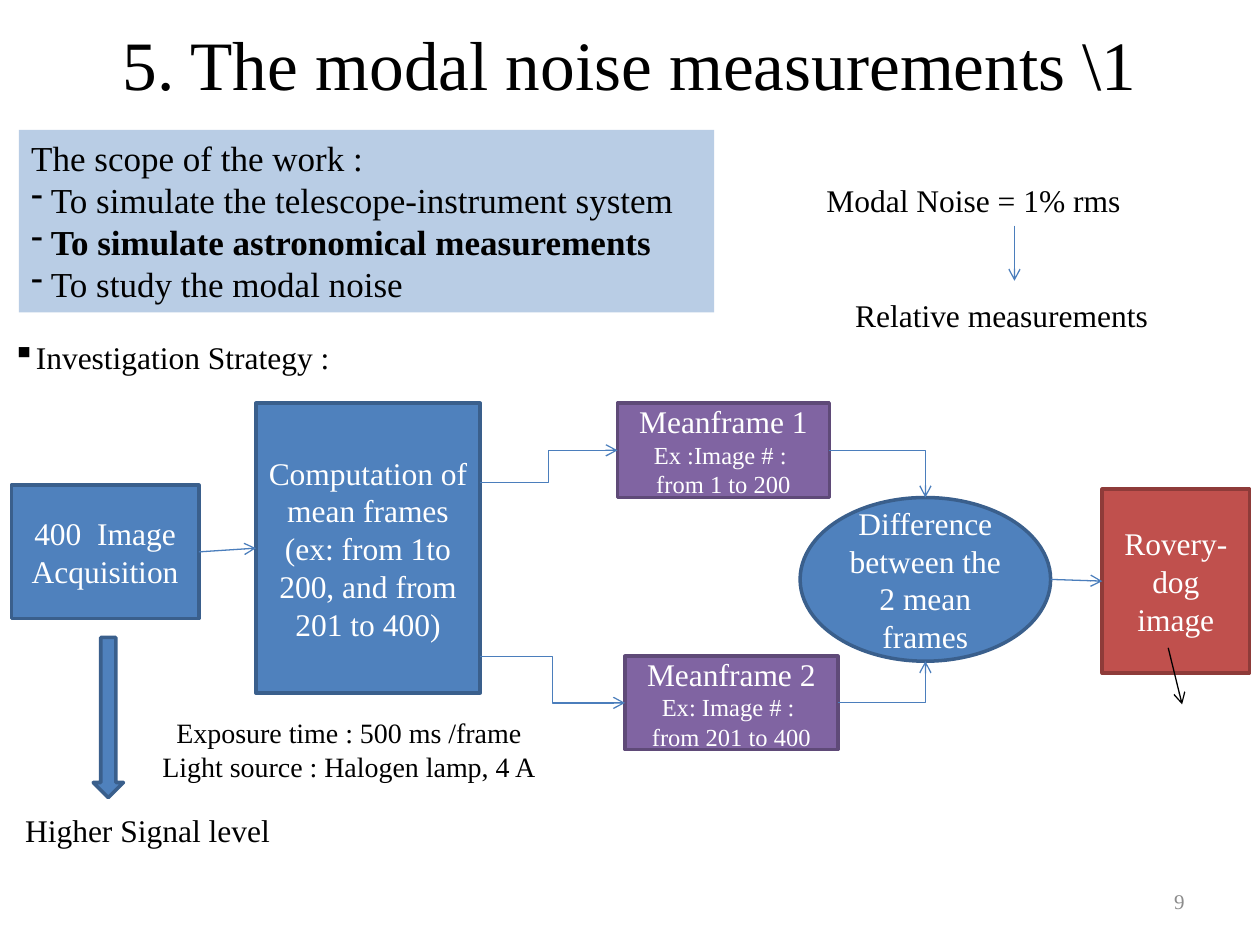
from lxml import etree
from pptx import Presentation, util as u
from pptx.dml.color import RGBColor
from pptx.enum import shapes, text
from pptx.oxml.ns import qn

BLACK = RGBColor(0, 0, 0)
WHITE = RGBColor(0xFF, 0xFF, 0xFF)
GREY = RGBColor(0x8C, 0x8C, 0x8C)
BLUE, BLUE_EDGE = RGBColor(0x4F, 0x81, 0xBD), RGBColor(0x3A, 0x5F, 0x8C)
PURPLE, PURPLE_EDGE = RGBColor(0x80, 0x64, 0xA2), RGBColor(0x5F, 0x4A, 0x78)
RED, RED_EDGE = RGBColor(0xC0, 0x50, 0x4D), RGBColor(0x8E, 0x3B, 0x39)
PALE_BLUE = RGBColor(0xB9, 0xCD, 0xE5)
LINE_BLUE = RGBColor(0x4B, 0x7E, 0xBC)
FONT = "Times New Roman"
LEFT, CENTER, RIGHT = text.PP_ALIGN.LEFT, text.PP_ALIGN.CENTER, text.PP_ALIGN.RIGHT
TOP, MIDDLE = text.MSO_ANCHOR.TOP, text.MSO_ANCHOR.MIDDLE
RECT, OVAL, DOWN = (shapes.MSO_SHAPE.RECTANGLE, shapes.MSO_SHAPE.OVAL,
                    shapes.MSO_SHAPE.DOWN_ARROW)

# Content: box in cm (left, top, width, height); each line is (text, format)
LABELS = [
    ((1.27, -0.33, 22.86, 3.18), CENTER, MIDDLE,
     [("5. The modal noise measurements \\1", {"size": 39.6})]),
    ((0, 6.68, 19.71, 1.02), LEFT, TOP,
     [("Investigation Strategy :", {"size": 18, "bullet": "▪"})]),
    ((2.92, 14.3, 8.23, 1.63), CENTER, TOP,
     [("Exposure time : 500 ms /frame", {"size": 16}),
      ("Light source : Halogen lamp, 4 A", {"size": 16})]),
    ((16.41, 3.53, 8.08, 1.02), LEFT, TOP, [("Modal Noise = 1% rms", {"size": 18})]),
    ((16.99, 5.84, 7.98, 1.02), LEFT, TOP, [("Relative measurements", {"size": 18})]),
    ((-0.69, 16.23, 7.49, 1.02), CENTER, TOP, [("Higher Signal level ", {"size": 18})]),
    ((18.21, 17.65, 5.92, 1.02), RIGHT, MIDDLE, [("9", {"size": 12, "color": GREY})]),
]
SCOPE_BOX = (0.38, 2.62, 14.02, 3.68)
SCOPE = [
    ("The scope of the work :", {"size": 20}),
    (" To simulate the telescope-instrument system", {"size": 20, "bullet": "-"}),
    (" To simulate astronomical measurements", {"size": 20, "bullet": "-", "bold": True}),
    (" To study the modal noise", {"size": 20, "bullet": "-"}),
]
BIG, SMALL = {"size": 18, "color": WHITE}, {"size": 14, "color": WHITE}
STEPS = {
    "acquisition": (RECT, (0.23, 9.78, 3.78, 2.69), BLUE, BLUE_EDGE,
                    [("400  Image Acquisition", BIG)]),
    "computation": (RECT, (5.16, 8.13, 4.52, 5.84), BLUE, BLUE_EDGE,
                    [("Computation of mean frames (ex: from 1to 200, and from 201 to 400)", BIG)]),
    "mean 1": (RECT, (12.45, 8.13, 4.27, 1.9), PURPLE, PURPLE_EDGE,
               [("Meanframe 1", BIG), ("Ex :Image # : ", SMALL), ("from 1 to 200", SMALL)]),
    "mean 2": (RECT, (12.6, 13.23, 4.29, 1.88), PURPLE, PURPLE_EDGE,
               [("Meanframe 2", BIG), ("Ex: Image # : ", SMALL), ("from 201 to 400", SMALL)]),
    "difference": (OVAL, (16.13, 10.03, 5.05, 3.3), BLUE, BLUE_EDGE,
                   [("Difference between the 2 mean frames", BIG)]),
    "result": (RECT, (22.22, 9.86, 2.97, 3.71), RED, RED_EDGE,
               [("Rovery-dog image", BIG)]),
    "signal arrow": (DOWN, (1.88, 12.85, 0.61, 3.23), BLUE, BLUE_EDGE, []),
}
BRANCHES = [("mean 1", 9.73, "top"), ("mean 2", 13.23, "bottom")]
FREE_ARROWS = [((20.45, 4.55), (20.45, 5.66), LINE_BLUE),
               ((23.55, 13.06), (23.83, 14.2), BLACK)]

presentation = Presentation()
presentation.slide_width, presentation.slide_height = u.Cm(25.4), u.Cm(19.05)
slide = presentation.slides.add_slide(presentation.slide_layouts[6])


def lengths(values):
    return [u.Cm(value) for value in values]


def write(shape, lines, align, anchor):
    frame = shape.text_frame
    frame.word_wrap = True
    frame.vertical_anchor = anchor
    for index, (words, style) in enumerate(lines):
        paragraph = frame.paragraphs[0] if index == 0 else frame.add_paragraph()
        paragraph.alignment = align
        run = paragraph.add_run()
        run.text = words
        font = {"name": FONT, "size": u.Pt(style["size"]), "bold": style.get("bold", False)}
        for name, value in font.items():
            setattr(run.font, name, value)
        run.font.color.rgb = style.get("color", BLACK)
        if "bullet" in style:
            properties = paragraph._p.get_or_add_pPr()
            etree.SubElement(properties, qn("a:buChar")).set("char", style["bullet"])


def add_box(kind, box, fill, edge, lines, align=CENTER, anchor=MIDDLE):
    shape = slide.shapes.add_shape(kind, *lengths(box))
    shape.shadow.inherit = False
    shape.fill.solid()
    shape.fill.fore_color.rgb = fill
    if edge is None:
        shape.line.fill.background()
    else:
        shape.line.color.rgb = edge
        shape.line.width = u.Pt(2)
    write(shape, lines, align, anchor)
    return shape


def add_arrow(start, end, color=LINE_BLUE, kind=shapes.MSO_CONNECTOR.STRAIGHT):
    arrow = slide.shapes.add_connector(kind, *lengths(start + end))
    arrow.line.color.rgb = color
    arrow.line.width = u.Pt(0.75)
    etree.SubElement(arrow.line._get_or_add_ln(), qn("a:tailEnd")).set("type", "arrow")
    etree.SubElement(arrow._element.spPr, qn("a:effectLst"))
    return arrow


def side(name, where):
    left, top, width, height = STEPS[name][1]
    across, down = {"top": (0.5, 0), "left": (0, 0.5),
                    "bottom": (0.5, 1), "right": (1, 0.5)}[where]
    return (left + across * width, top + down * height)


# Labels and scope panel
for box, align, anchor, lines in LABELS:
    write(slide.shapes.add_textbox(*lengths(box)), lines, align, anchor)
add_box(RECT, SCOPE_BOX, PALE_BLUE, None, SCOPE, LEFT, TOP)

# Flow steps
step_shapes = {name: add_box(*step) for name, step in STEPS.items()}

# Straight arrows between steps
arrow = add_arrow(side("acquisition", "right"), side("computation", "left"))
arrow.begin_connect(step_shapes["acquisition"], 3)
arrow.end_connect(step_shapes["computation"], 1)
arrow = add_arrow(side("difference", "right"), side("result", "left"))
arrow.end_connect(step_shapes["result"], 1)

# Elbows out to each mean frame and on to the difference
elbow = shapes.MSO_CONNECTOR.ELBOW
for name, exit_height, entry in BRANCHES:
    exit_point = (side("computation", "right")[0], exit_height)
    add_arrow(exit_point, side(name, "left"), kind=elbow)
    corner = add_arrow(side(name, "right"), side("difference", entry), kind=elbow)
    corner._element.spPr.find(qn("a:prstGeom")).set("prst", "bentConnector2")

# Free arrows
for start, end, color in FREE_ARROWS:
    add_arrow(start, end, color)

presentation.save("out.pptx")
